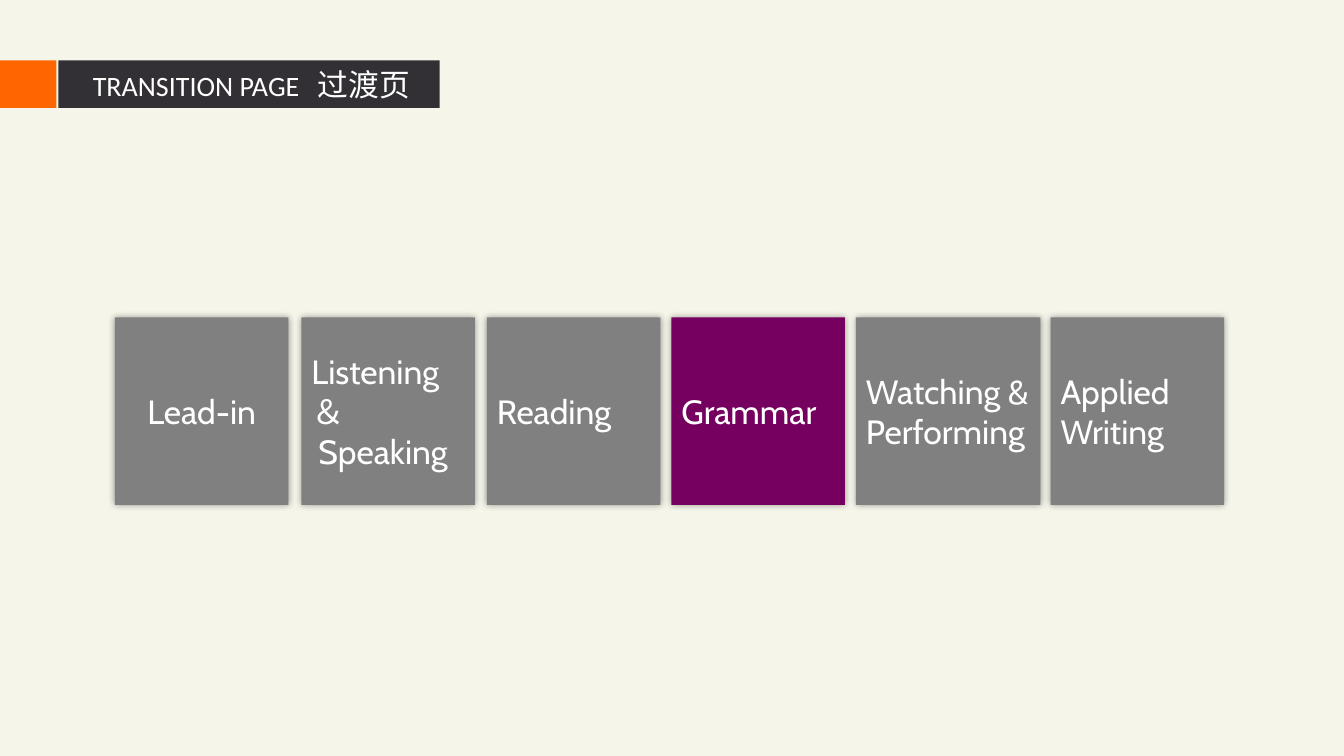
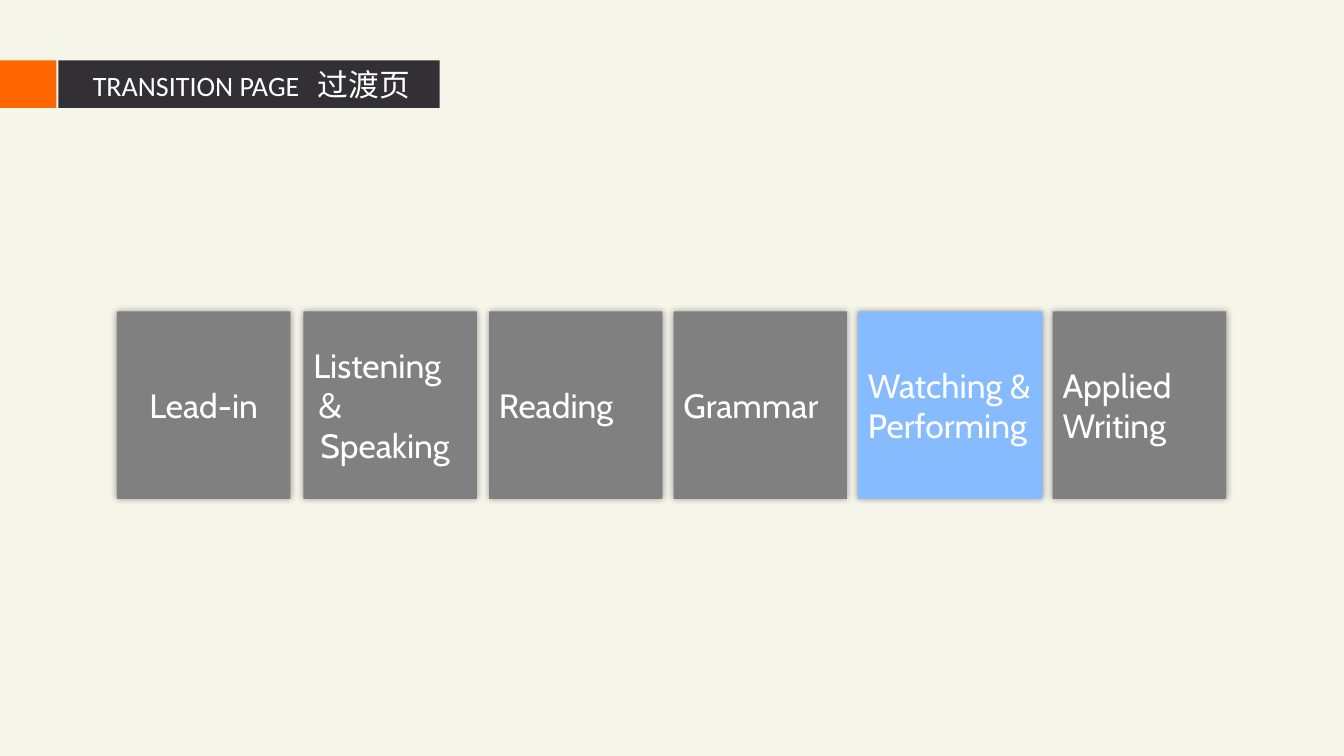
from dataclasses import dataclass

from lxml import etree
from pptx import Presentation
from pptx.dml.color import RGBColor
from pptx.enum import shapes as kinds, text as txt
from pptx.oxml.ns import qn
from pptx.util import Inches, Pt

HUES = {
    "page": "F5F5EA",
    "bar": "323034",
    "mark": "FF6600",
    "idle": "808080",
    "plum": "75005F",
    "sky": "87BBFF",
    "white": "FFFFFF",
    "black": "000000",
}
CJK = "Noto Sans CJK SC"
LEFT, MID = txt.PP_ALIGN.LEFT, txt.PP_ALIGN.CENTER
BAND_TOP, BAND_HIGH = 0.6, 0.47
CARD_HIGH = 1.86


@dataclass(frozen=True)
class Card:
    """One topic; x is measured from the first card, each line is a list of (text, font)."""
    x: float
    lines: tuple
    wide: float = 1.72
    align: int = LEFT


@dataclass(frozen=True)
class Page:
    left: float
    top: float
    live: int
    hue: str


CARDS = (
    Card(0, ((("Lead-in", "Cabin"),),), align=MID),
    Card(1.85, ((("Listening ", "Cabin"), ("＆", "Calibri")), (("Speaking", "Cabin"),))),
    Card(3.69, ((("Reading", "Cabin"),),)),
    Card(5.52, ((("Grammar", "Cabin"),),)),
    Card(7.35, ((("Watching & Performing", "Cabin"),),), wide=1.83),
    Card(9.28, ((("Applied Writing", "Cabin"),),)),
)
PAGES = (
    Page(1.14, 3.15, 3, "plum"),
    Page(1.16, 3.09, 4, "sky"),
)


def tint(fill, hue: str) -> None:
    fill.solid()
    fill.fore_color.rgb = RGBColor.from_string(HUES[hue])


def write(para, words: str, *, font: str, size: float, hue: str = "white") -> None:
    run = para.add_run()
    run.text = words
    run.font.name, run.font.size = font, Pt(size)
    run.font.color.rgb = RGBColor.from_string(HUES[hue])
    etree.SubElement(run.font._element, qn("a:ea"), typeface=CJK)


def place(shape, left: float, top: float, wide: float, high: float) -> None:
    shape.left, shape.top = Inches(left), Inches(top)
    shape.width, shape.height = Inches(wide), Inches(high)


def block(parent, left: float, top: float, wide: float, high: float, hue: str):
    shape = parent.add_shape(kinds.MSO_SHAPE.RECTANGLE, 0, 0, 0, 0)
    place(shape, left, top, wide, high)
    shape.shadow.inherit = False
    tint(shape.fill, hue)
    shape.line.fill.background()
    return shape


def glow(shape) -> None:
    """Add a soft shadow on all sides."""
    effects = shape._element.spPr.find(qn("a:effectLst"))
    shade = etree.SubElement(effects, qn("a:outerShdw"), blurRad=str(Pt(5)),
                             dist="0", dir="0", algn="ctr", rotWithShape="0")
    color = etree.SubElement(shade, qn("a:srgbClr"), val=HUES["black"])
    etree.SubElement(color, qn("a:alpha"), val="40000")


def head(slide) -> None:
    """Draw the title band and its marker."""
    title = slide.shapes.title
    place(title, 0.58, BAND_TOP, 3.78, BAND_HIGH)
    tint(title.fill, "bar")
    frame = title.text_frame
    frame.auto_size = txt.MSO_AUTO_SIZE.NONE
    frame.vertical_anchor = txt.MSO_ANCHOR.MIDDLE
    frame.margin_left, frame.margin_right = Inches(0.34), Inches(0)
    para = frame.paragraphs[0]
    para.alignment = LEFT
    tabs = etree.SubElement(para._p.get_or_add_pPr(), qn("a:tabLst"))
    etree.SubElement(tabs, qn("a:tab"), pos=str(Inches(2.23)), algn="l")
    write(para, "TRANSITION PAGE\t", font="Calibri", size=20)
    write(para, "过渡页", font=CJK, size=22)
    block(slide.shapes, 0, BAND_TOP, 0.56, BAND_HIGH, "mark")


def draw(group, card: Card, page: Page, hue: str) -> None:
    shape = block(group.shapes, page.left + card.x, page.top, card.wide, CARD_HIGH, hue)
    glow(shape)
    frame = shape.text_frame
    frame.word_wrap = True
    frame.vertical_anchor = txt.MSO_ANCHOR.MIDDLE
    for i, line in enumerate(card.lines):
        para = frame.add_paragraph() if i else frame.paragraphs[0]
        para.alignment = card.align
        if i:
            para._p.get_or_add_pPr().set("marL", str(Inches(0.07)))
        for words, font in line:
            write(para, words, font=font, size=24)


def main() -> None:
    deck = Presentation()
    deck.slide_width, deck.slide_height = Inches(13.33), Inches(7.5)
    tint(deck.slide_master.background.fill, "page")
    for page in PAGES:
        slide = deck.slides.add_slide(deck.slide_layouts.get_by_name("Title Only"))
        head(slide)
        group = slide.shapes.add_group_shape()
        for i, card in enumerate(CARDS):
            draw(group, card, page, page.hue if i == page.live else "idle")
    deck.save("out.pptx")


if __name__ == "__main__":
    main()
